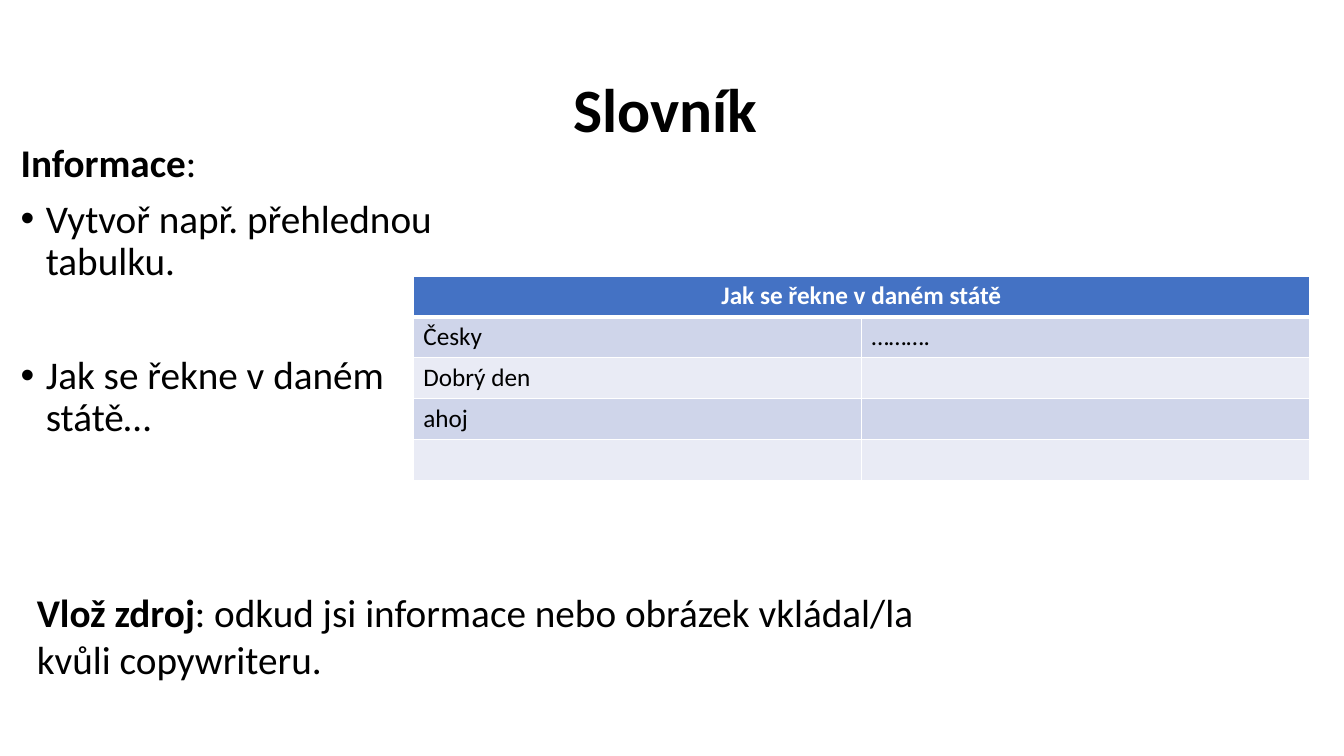
from dataclasses import dataclass

from lxml import etree
from pptx import Presentation
from pptx import util as u
from pptx.dml.color import RGBColor
from pptx.enum import text as t
from pptx.oxml import ns

WIDE, HIGH = u.Inches(13.33), u.Inches(7.5)
FONT = "Calibri"
HUES = {"ink": "000000", "paper": "FFFFFF", "head": "4472C4",
        "odd": "CFD5EA", "even": "E9EBF5"}


@dataclass
class Box:
    left: float
    top: float
    width: float
    height: float

    def place(self) -> tuple:
        return (u.Emu(int(self.left * WIDE)), u.Emu(int(self.top * HIGH)),
                u.Emu(int(self.width * WIDE)), u.Emu(int(self.height * HIGH)))


@dataclass
class Run:
    words: str
    bold: bool = False
    size: int = 28
    hue: str = "ink"


@dataclass
class Para:
    runs: list
    gap: float = 0
    lead: float = 1
    dot: bool = False
    mid: bool = False


TITLE = Box(0.069, 0.053, 0.863, 0.193)
BODY = Box(0.008, 0.183, 0.321, 0.635)
TABLE = Box(0.3075, 0.365, 0.667, 0.271)
CREDIT = Box(0.02, 0.771, 0.672, 0.139)

HEADING = [Para([Run("Slovník ", True, 44)], lead=0.9, mid=True)]
NOTES = [
    Para([Run("Informace", True), Run(":")], 10, 0.9),
    Para([Run("Vytvoř např. přehlednou tabulku.")], 10, 0.9, True),
    Para([Run("Jak se řekne v daném státě…")], 51, 0.9, True),
]
SOURCE = [Para([
    Run("Vlož zdroj", True),
    Run(": odkud jsi informace nebo obrázek vkládal/la kvůli copywriteru."),
])]
ROWS = [
    ["Jak se řekne v daném státě", ""],
    ["Česky", "………."],
    ["Dobrý den", ""],
    ["ahoj", ""],
    ["", ""],
]


def color(name: str) -> RGBColor:
    return RGBColor.from_string(HUES[name])


def write(frame, paras: list) -> None:
    for i, para in enumerate(paras):
        line = frame.paragraphs[0] if i == 0 else frame.add_paragraph()
        line.alignment = t.PP_ALIGN.CENTER if para.mid else t.PP_ALIGN.LEFT
        line.line_spacing = para.lead
        line.space_before = u.Pt(para.gap)
        if para.dot:
            props = line._p.get_or_add_pPr()
            props.set("marL", str(u.Inches(0.25)))
            props.set("indent", str(-u.Inches(0.25)))
            etree.SubElement(props, ns.qn("a:buFont"), typeface="Arial")
            etree.SubElement(props, ns.qn("a:buChar"), char="•")
        for part in para.runs:
            run = line.add_run()
            run.text = part.words
            run.font.name = FONT
            run.font.size = u.Pt(part.size)
            run.font.bold = part.bold
            run.font.color.rgb = color(part.hue)


def add_text(slide, box: Box, paras: list) -> None:
    frame = slide.shapes.add_textbox(*box.place()).text_frame
    frame.word_wrap = True
    write(frame, paras)


def edge(cell, side: str, width: float) -> None:
    line = etree.SubElement(cell._tc.get_or_add_tcPr(), ns.qn(f"a:ln{side}"),
                            w=str(u.Pt(width)))
    fill = etree.SubElement(line, ns.qn("a:solidFill"))
    etree.SubElement(fill, ns.qn("a:srgbClr"), val=HUES["paper"])


def add_grid(slide, box: Box, rows: list) -> None:
    grid = slide.shapes.add_table(len(rows), len(rows[0]), *box.place()).table
    grid.cell(0, 0).merge(grid.cell(0, len(rows[0]) - 1))
    for r, row in enumerate(rows):
        head = r == 0
        band = "head" if head else "odd" if r % 2 else "even"
        for c, words in enumerate(row):
            cell = grid.cell(r, c)
            for side in "LRTB":
                thick = (r, side) in ((0, "B"), (1, "T"))
                edge(cell, side, 3 if thick else 1)
            cell.fill.solid()
            cell.fill.fore_color.rgb = color(band)
            if words:
                run = Run(words, head, 18, "paper" if head else "ink")
                write(cell.text_frame, [Para([run], mid=head)])


def main() -> None:
    deck = Presentation()
    deck.slide_width, deck.slide_height = WIDE, HIGH
    slide = deck.slides.add_slide(deck.slide_layouts[5])
    title = slide.shapes.title
    title.left, title.top, title.width, title.height = TITLE.place()
    title.text_frame.vertical_anchor = t.MSO_ANCHOR.MIDDLE
    write(title.text_frame, HEADING)
    add_text(slide, BODY, NOTES)
    add_grid(slide, TABLE, ROWS)
    add_text(slide, CREDIT, SOURCE)
    deck.save("out.pptx")


if __name__ == "__main__":
    main()
